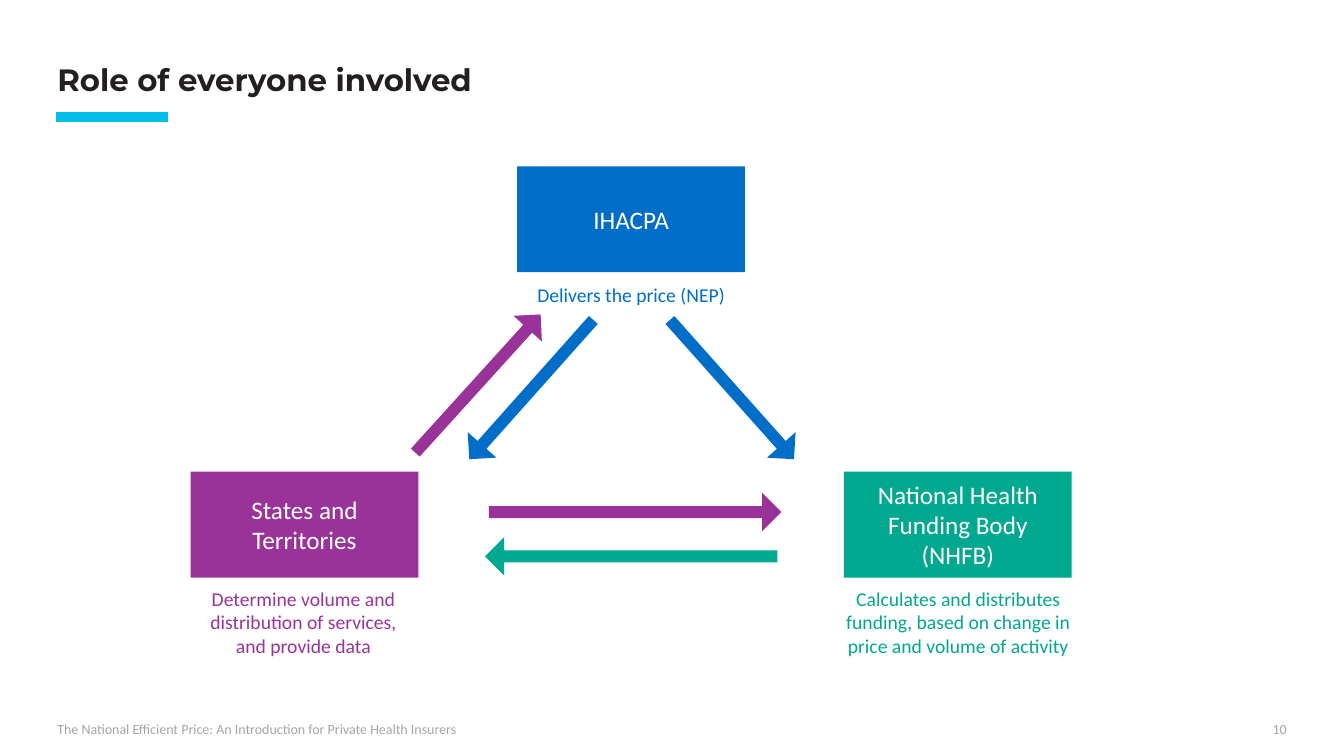
import pptx
import pptx.util
import pptx.dml.color
import pptx.enum.shapes
import pptx.enum.text
import lxml.etree

Inches, Pt = pptx.util.Inches, pptx.util.Pt
RGBColor = pptx.dml.color.RGBColor
ALIGN, ANCHOR = pptx.enum.text.PP_ALIGN, pptx.enum.text.MSO_ANCHOR
SHAPE = pptx.enum.shapes.MSO_SHAPE

BLUE = RGBColor(0x00, 0x6E, 0xC8)
PURPLE = RGBColor(0x99, 0x33, 0x99)
GREEN = RGBColor(0x00, 0xA8, 0x8F)
CYAN = RGBColor(0x00, 0xBE, 0xE6)
INK = RGBColor(0x23, 0x1F, 0x20)
GREY = RGBColor(0xA6, 0xA6, 0xA6)
WHITE = RGBColor(0xFF, 0xFF, 0xFF)

# Content
TITLE = "Role of everyone involved"
FOOTER = "The National Efficient Price: An Introduction for Private Health Insurers"
PAGE = "10"
# name, role, colour, column, row, caption (left, top, width, height)
PARTIES = [
    ("IHACPA", "Delivers the price (NEP)", BLUE, 1, 0, (5.09, 2.76, 2.34, 0.34)),
    ("States and Territories",
     "Determine volume and distribution of services, and provide data",
     PURPLE, 0, 1, (1.84, 5.77, 2.34, 0.81)),
    ("National Health Funding Body (NHFB)",
     "Calculates and distributes funding, based on change in price and volume of activity",
     GREEN, 2, 1, (8.24, 5.77, 2.53, 0.81)),
]
# centre x, centre y, length, clockwise turn from pointing down, colour
ARROWS = [
    (5.27, 3.865, 1.85, 41.7, BLUE),
    (7.26, 3.865, 1.85, 318.3, BLUE),
    (4.74, 3.805, 1.85, 222.2, PURPLE),
    (6.30, 5.08, 2.9, 270, PURPLE),
    (6.26, 5.52, 2.9, 90, GREEN),
]

# Grid of boxes
BOX_W, BOX_H = 2.26, 1.05
GRID_X, GRID_Y = 1.89, 1.65
COL_STEP, ROW_STEP = 3.24, 3.03
ARROW_W, SHAFT_SHARE = 0.38, 0.308

prs = pptx.Presentation()
prs.slide_width, prs.slide_height = Inches(13.33), Inches(7.5)
s = prs.slides.add_slide(prs.slide_layouts[6])


def write(sp, text, size, color, align=ALIGN.LEFT, anchor=ANCHOR.TOP,
          font="Calibri", bold=False):
    tf = sp.text_frame
    tf.word_wrap = True
    tf.vertical_anchor = anchor
    tf.text = text
    p = tf.paragraphs[0]
    p.alignment = align
    f = p.runs[0].font
    f.name, f.size, f.bold = font, Pt(size), bold
    f.color.rgb = color
    return sp


def add_text(place, *args, **kwargs):
    return write(s.shapes.add_textbox(*map(Inches, place)), *args, **kwargs)


def add_block(kind, place, color):
    sp = s.shapes.add_shape(kind, *map(Inches, place))
    sp.shadow.inherit = False
    sp.fill.solid()
    sp.fill.fore_color.rgb = color
    sp.line.fill.background()
    return sp


# Title with its rule
title = add_text((0.47, 0.47, 12.39, 0.5), TITLE, 22, INK,
                 anchor=ANCHOR.BOTTOM, font="Montserrat", bold=True)
title.text_frame.margin_bottom = 0
title.text_frame.paragraphs[0].line_spacing = 0.9
rule = s.shapes.add_connector(pptx.enum.shapes.MSO_CONNECTOR.STRAIGHT,
                              Inches(0.56), Inches(1.16), Inches(1.67), Inches(1.16))
rule.line.color.rgb = CYAN
rule.line.width = Pt(7)
lxml.etree.SubElement(rule.line._get_or_add_ln().getparent(),
                      pptx.oxml.ns.qn("a:effectLst"))

# Footer and page number
add_text((0.47, 7.1, 8.09, 0.27), FOOTER, 10, GREY, anchor=ANCHOR.MIDDLE)
add_text((9.86, 7.1, 3, 0.27), PAGE, 10, GREY, align=ALIGN.RIGHT)

# Parties and what each one does
for name, role, color, col, row, caption in PARTIES:
    box = add_block(SHAPE.RECTANGLE, (GRID_X + col * COL_STEP, GRID_Y + row * ROW_STEP,
                                      BOX_W, BOX_H), color)
    write(box, name, 18, WHITE, ALIGN.CENTER, ANCHOR.MIDDLE)
    add_text(caption, role, 14, color, align=ALIGN.CENTER)

# Flows between the parties
for x, y, length, turn, color in ARROWS:
    arrow = add_block(SHAPE.DOWN_ARROW,
                      (x - ARROW_W / 2, y - length / 2, ARROW_W, length), color)
    arrow.adjustments[0] = SHAFT_SHARE
    arrow.adjustments[1] = 0.5
    arrow.rotation = turn

prs.save("out.pptx")
